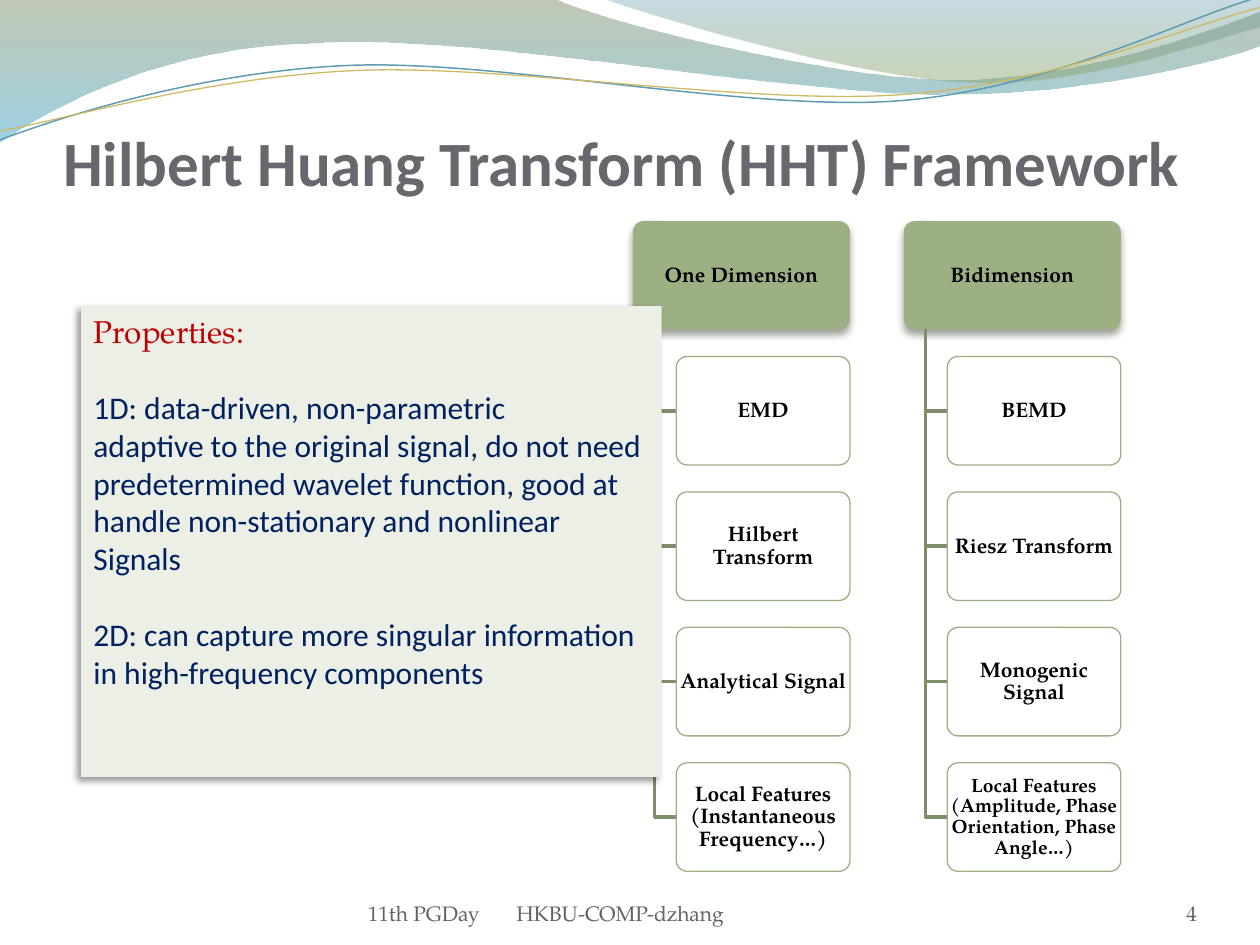
import math
from dataclasses import dataclass

from lxml import etree
from pptx import Presentation
from pptx.dml.color import RGBColor as Rgb
from pptx.enum import shapes as kinds, text as t
from pptx.oxml import ns
from pptx.util import Pt


@dataclass(frozen=True)
class Theme:
    sans: str = "Calibri"
    serif: str = "TeX Gyre Pagella"
    ink: str = "000000"
    gray: str = "69676D"
    foot: str = "646268"
    red: str = "C00000"
    navy: str = "002060"
    white: str = "FFFFFF"
    green: str = "9CB084"
    stem: str = "7D8D6A"
    pale: str = "EBEFE6"
    shade: str = "373E2E"
    blue: str = "5E9CB1"
    gold: str = "CEB966"
    big: int = 36
    body: int = 18
    small: int = 12
    tiny: int = 11


theme = Theme()


def write(shape, lines, size=theme.small, font=theme.serif, color=theme.ink,
          bold=False, align="LEFT", anchor="MIDDLE", inset=(0, 0, 0, 0),
          space=None):
    """Put lines of text in a shape, one paragraph for each."""
    frame = shape.text_frame
    frame.word_wrap = True
    frame.auto_size = t.MSO_AUTO_SIZE.NONE
    frame.vertical_anchor = t.MSO_ANCHOR[anchor]
    (frame.margin_left, frame.margin_top,
     frame.margin_right, frame.margin_bottom) = map(Pt, inset)
    for i, line in enumerate(lines):
        para = frame.paragraphs[0] if i == 0 else frame.add_paragraph()
        para.alignment = t.PP_ALIGN[align]
        para.line_spacing = space
        run = para.add_run()
        run.text = line
        run.font.name, run.font.size, run.font.bold = font, Pt(size), bold
        run.font.color.rgb = Rgb.from_string(color)
    return frame


def trace(start, steps, close=False, color=None, width=1, tilt=0, hub=(0, 0)):
    """Draw an outline; a step is a point, or the six numbers of a curve."""
    dots = [start] + [s[i:i + 2] for s in steps for i in range(0, len(s), 2)]
    cos, sin = math.cos(math.radians(tilt)), math.sin(math.radians(tilt))
    hx, hy = hub
    dots = [(Pt(hx + (x - hx) * cos + (y - hy) * sin),
             Pt(hy - (x - hx) * sin + (y - hy) * cos)) for x, y in dots]
    pen = slide.shapes.build_freeform(*dots[0], scale=1.0)
    pen.add_line_segments(dots[1:], close=close)
    shape = pen.convert_to_shape()
    shape.rotation = tilt

    # Join each three points of a curve into one Bézier step
    nodes = iter(list(shape._element.iter(ns.qn("a:lnTo"))))
    for step in steps:
        trio = [next(nodes) for _ in range(len(step) // 2)]
        if len(trio) == 3:
            curve = etree.Element(ns.qn("a:cubicBezTo"))
            trio[0].addprevious(curve)
            for node in trio:
                curve.append(node[0])
                node.getparent().remove(node)

    shape.shadow.inherit = False
    if color:
        shape.fill.background()
        shape.line.color.rgb = Rgb.from_string(color)
        shape.line.width = Pt(width)
    else:
        shape.line.fill.background()
    return shape


deck = Presentation()
deck.slide_width, deck.slide_height = Pt(720), Pt(540)
slide = deck.slides.add_slide(deck.slide_layouts[5])

# Waves: stops are (place, colour, opacity in percent)
waves = [
    ((0, 0), [(316.8, -0.7),
              (342.7, 12.2, 478, 45.4, 545.8, 45.4),
              (614.2, 45.4, 689.8, 18.7, 720, 6.5),
              (720.7, 25.9),
              (707.8, 31.7, 626.4, 54.7, 537.1, 54),
              (447.8, 54, 275, 20.2, 185, 24.5),
              (92.9, 25.9, 33.1, 59.8, -0.7, 81.4)],
     [(0, "74855E", 45), (1, "4AACCE", 55)]),
    ((344.9, -0.7), [(366.5, 7.9, 491, 44.6, 553.7, 46.8),
                     (616.3, 49.7, 691.9, 23, 720, 15.1),
                     (720, 0)],
     [(0, "45889F", 30), (0.8, "8AA36D", 45)]),
]
for start, steps, stops in waves:
    wave = trace(start, steps, close=True)
    wave.fill.gradient()
    wave.fill.gradient_angle = 270
    for stop, (place, color, _) in zip(wave.fill.gradient_stops, stops):
        stop.position = place
        stop.color.rgb = Rgb.from_string(color)
    for tone, (_, _, alpha) in zip(wave._element.iter(ns.qn("a:srgbClr")), stops):
        etree.SubElement(tone, ns.qn("a:alpha"), val=str(alpha * 1000))

# Thin curves
trace((0, 79.9), [(34.6, 67, 113.8, 41, 199.4, 37.4),
                  (284.4, 33.8, 427, 64.1, 513.4, 57.6),
                  (599.8, 51.1, 675.4, 10.8, 718.6, -1.4)],
      color=theme.blue, width=0.85, tilt=357.3, hub=(359.3, 41.4))
trace((0, 74.9), [(33.8, 69.1, 118.1, 43.9, 203.8, 40.3),
                  (290.2, 36.7, 429.8, 60.5, 516.2, 54),
                  (601.9, 48.2, 677.5, 15.1, 720, 4.3)],
      color=theme.gold, width=0.75, tilt=357.3, hub=(359.6, 42.5))

# Title
title = slide.shapes.title
title.left, title.top, title.width, title.height = map(Pt, (36, 23.8, 648, 90))
write(title, ["Hilbert Huang Transform (HHT) Framework"], size=theme.big,
      font=theme.sans, color=theme.gray, bold=True, anchor="BOTTOM",
      inset=(0, 3.6, 0, 0))

# Two trees of methods
trees = [
    ["One Dimension", "EMD", "Hilbert Transform", "Analytical Signal",
     "Local Features (Instantaneous Frequency…)"],
    ["Bidimension", "BEMD", "Riesz Transform", "Monogenic Signal",
     "Local Features (Amplitude, Phase Orientation, Phase Angle…)"],
]
left, top, wide, high = 361.7, 126.3, 124, 62
gap, pitch, shift = 154.8, 77.4, 24.8
shades = []
for col, tree in enumerate(trees):
    x = left + col * gap
    for row, label in enumerate(tree):
        y = top + row * pitch
        dent = shift if row else 0
        if row:
            stem, mid = x + shift / 2, y + high / 2
            trace((stem, top + high), [(stem, mid), (x + shift, mid)],
                  color=theme.stem, width=2)
        box = slide.shapes.add_shape(kinds.MSO_SHAPE.ROUNDED_RECTANGLE,
                                     Pt(x + dent), Pt(y), Pt(wide - dent), Pt(high))
        box.adjustments[0] = 0.1
        box.fill.solid()
        box.fill.fore_color.rgb = Rgb.from_string(theme.white if row else theme.green)
        box.shadow.inherit = False
        if row:
            box.line.color.rgb = Rgb.from_string(theme.green)
            box.line.width = Pt(0.75)
        else:
            box.line.fill.background()
            shades.append((box, theme.shade, 48, 4.5, 90))
        size = theme.tiny if len(label) > 50 else theme.small
        write(box, [label], size=size, bold=True, align="CENTER", space=0.9)

# Properties panel
panel = slide.shapes.add_shape(kinds.MSO_SHAPE.RECTANGLE,
                               Pt(46.3), Pt(175), Pt(331.8), Pt(269))
panel.fill.solid()
panel.fill.fore_color.rgb = Rgb.from_string(theme.pale)
panel.line.fill.background()
panel.shadow.inherit = False
shades.append((panel, theme.ink, 40, 4, 135))
notes = ["Properties:", "1D: data-driven, non-parametric",
         "adaptive to the original signal, do not need",
         "predetermined wavelet function, good at",
         "handle non-stationary and nonlinear", "Signals",
         "2D: can capture more singular information",
         "in high-frequency components"]
frame = write(panel, notes, size=theme.body, font=theme.sans, color=theme.navy,
              anchor="TOP", inset=(7.2, 3.6, 0, 3.6))
head = frame.paragraphs[0]
head.runs[0].font.name = theme.serif
head.runs[0].font.color.rgb = Rgb.from_string(theme.red)
for para in (head, frame.paragraphs[5]):
    para.space_after = Pt(21.6)

# Soft shadows
for shape, color, alpha, blur, turn in shades:
    glow = etree.SubElement(shape._element.spPr.find(ns.qn("a:effectLst")),
                            ns.qn("a:outerShdw"), blurRad=str(Pt(blur)),
                            dist=str(Pt(3)), dir=str(turn * 60000), rotWithShape="0")
    tone = etree.SubElement(glow, ns.qn("a:srgbClr"), val=color)
    etree.SubElement(tone, ns.qn("a:alpha"), val=str(alpha * 1000))

# Footer and page number
for x, width, label, align in [(210.2, 264, "11th PGDay\tHKBU-COMP-dzhang", "LEFT"),
                               (624, 60, "4", "RIGHT")]:
    foot = slide.shapes.add_textbox(Pt(x), Pt(500.4), Pt(width), Pt(28.8))
    frame = write(foot, [label], color=theme.foot, align=align, anchor="BOTTOM")
    if "\t" in label:
        tabs = etree.SubElement(frame.paragraphs[0]._p.get_or_add_pPr(),
                                ns.qn("a:tabLst"))
        etree.SubElement(tabs, ns.qn("a:tab"), pos=str(Pt(84.8)), algn="l")

deck.save("out.pptx")
